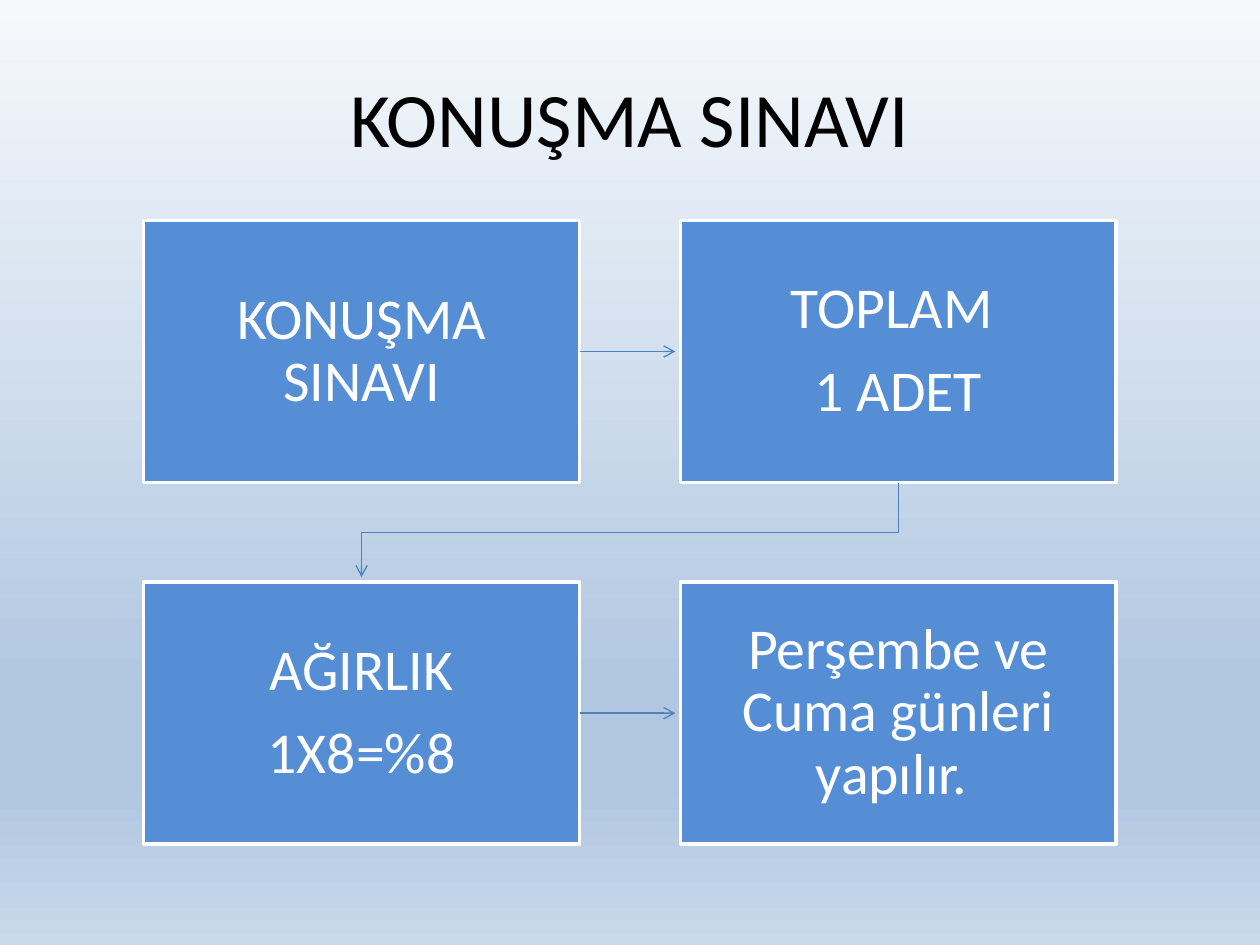
from copy import deepcopy

from lxml import etree
from pptx import Presentation
from pptx.dml.color import RGBColor
from pptx.enum.shapes import MSO_CONNECTOR, MSO_SHAPE
from pptx.enum.text import MSO_ANCHOR, PP_ALIGN
from pptx.oxml.ns import qn
from pptx.util import Inches, Pt

RECTANGLE = MSO_SHAPE.RECTANGLE
STRAIGHT = MSO_CONNECTOR.STRAIGHT
MIDDLE = MSO_ANCHOR.MIDDLE
CENTER = PP_ALIGN.CENTER

# Content
TITLE = "KONUŞMA SINAVI"
STEPS = [
    ["KONUŞMA SINAVI"],
    ["TOPLAM ", "1 ADET"],
    ["AĞIRLIK", "1X8=%8"],
    ["Perşembe ve Cuma günleri yapılır. "],
]

# Look
FONT = "Calibri"
BLACK = RGBColor(0x00, 0x00, 0x00)
WHITE = RGBColor(0xFF, 0xFF, 0xFF)
STEP_BLUE = RGBColor(0x55, 0x8E, 0xD5)
ARROW_BLUE = RGBColor(0x4F, 0x81, 0xBD)
BACKGROUND_STOPS = [
    (0, RGBColor(0xF6, 0xF9, 0xFC)),
    (0.74, RGBColor(0xB0, 0xC6, 0xE1)),
    (0.83, RGBColor(0xB0, 0xC6, 0xE1)),
    (1, RGBColor(0xCA, 0xD9, 0xEB)),
]

# Grid, in inches
COLUMNS = 2
LEFT, TOP = 1.14, 1.75
STEP_W, STEP_H = 3.46, 2.08
PITCH_X, PITCH_Y = 4.26, 2.87
ARROW_GAP = 0.04
INSET = 0.26


def paint_background(slide):
    fill = slide.background.fill
    fill.gradient()
    fill.gradient_angle = 270
    stop_list = slide.element.find(".//" + qn("a:gsLst"))
    while len(stop_list) < len(BACKGROUND_STOPS):
        stop_list.append(deepcopy(stop_list[0]))
    for stop, (position, color) in zip(fill.gradient_stops, BACKGROUND_STOPS):
        stop.position = position
        stop.color.rgb = color


def format_paragraph(paragraph, size, color):
    paragraph.alignment = CENTER
    for run in paragraph.runs:
        run.font.name = FONT
        run.font.size = Pt(size)
        run.font.color.rgb = color


def add_title(slide):
    title = slide.shapes.title
    title.left, title.top = Inches(0.5), Inches(0.3)
    title.width, title.height = Inches(9), Inches(1.25)
    title.text_frame.text = TITLE
    title.text_frame.vertical_anchor = MIDDLE
    format_paragraph(title.text_frame.paragraphs[0], 44, BLACK)


def add_step(slide, lines, x, y):
    step = slide.shapes.add_shape(
        RECTANGLE, Inches(x), Inches(y), Inches(STEP_W), Inches(STEP_H))
    step.shadow.inherit = False
    step.fill.solid()
    step.fill.fore_color.rgb = STEP_BLUE
    step.line.color.rgb = WHITE
    step.line.width = Pt(2)
    frame = step.text_frame
    frame.word_wrap = True
    frame.vertical_anchor = MIDDLE
    frame.margin_left = frame.margin_right = Inches(INSET)
    frame.margin_top = frame.margin_bottom = Inches(INSET)
    frame.text = "\n".join(lines)
    for paragraph in frame.paragraphs:
        paragraph.line_spacing = 0.9
        paragraph.space_after = Pt(11.55)
        format_paragraph(paragraph, 33, WHITE)


def style_arrow(arrow):
    arrow.line.color.rgb = ARROW_BLUE
    arrow.line.width = Pt(0.75)
    etree.SubElement(arrow.line._get_or_add_ln(), qn("a:tailEnd"), type="arrow")


def add_straight_arrow(slide, x1, x2, y):
    arrow = slide.shapes.add_connector(
        STRAIGHT, Inches(x1), Inches(y), Inches(x2), Inches(y))
    style_arrow(arrow)
    etree.SubElement(arrow._element.spPr, qn("a:effectLst"))


def add_bent_arrow(slide, points):
    start, *rest = [(Inches(x), Inches(y)) for x, y in points]
    builder = slide.shapes.build_freeform(*start)
    builder.add_line_segments(rest, close=False)
    arrow = builder.convert_to_shape()
    arrow.fill.background()
    style_arrow(arrow)
    arrow.shadow.inherit = False


def main():
    prs = Presentation()
    prs.slide_width, prs.slide_height = Inches(10), Inches(7.5)
    slide = prs.slides.add_slide(prs.slide_layouts[5])
    paint_background(slide)
    add_title(slide)

    # Steps, row by row
    corners = [(LEFT + i % COLUMNS * PITCH_X, TOP + i // COLUMNS * PITCH_Y)
               for i in range(len(STEPS))]
    for lines, (x, y) in zip(STEPS, corners):
        add_step(slide, lines, x, y)

    # Arrows: straight within a row, bent to the next row
    for (x, y), (next_x, next_y) in zip(corners, corners[1:]):
        if y == next_y:
            add_straight_arrow(slide, x + STEP_W, next_x - ARROW_GAP,
                               y + STEP_H / 2)
        else:
            start_x, end_x = x + STEP_W / 2, next_x + STEP_W / 2
            bottom = y + STEP_H
            bend = (bottom + next_y) / 2
            add_bent_arrow(slide, [(start_x, bottom), (start_x, bend),
                                   (end_x, bend), (end_x, next_y - ARROW_GAP)])

    prs.save("out.pptx")


if __name__ == "__main__":
    main()
